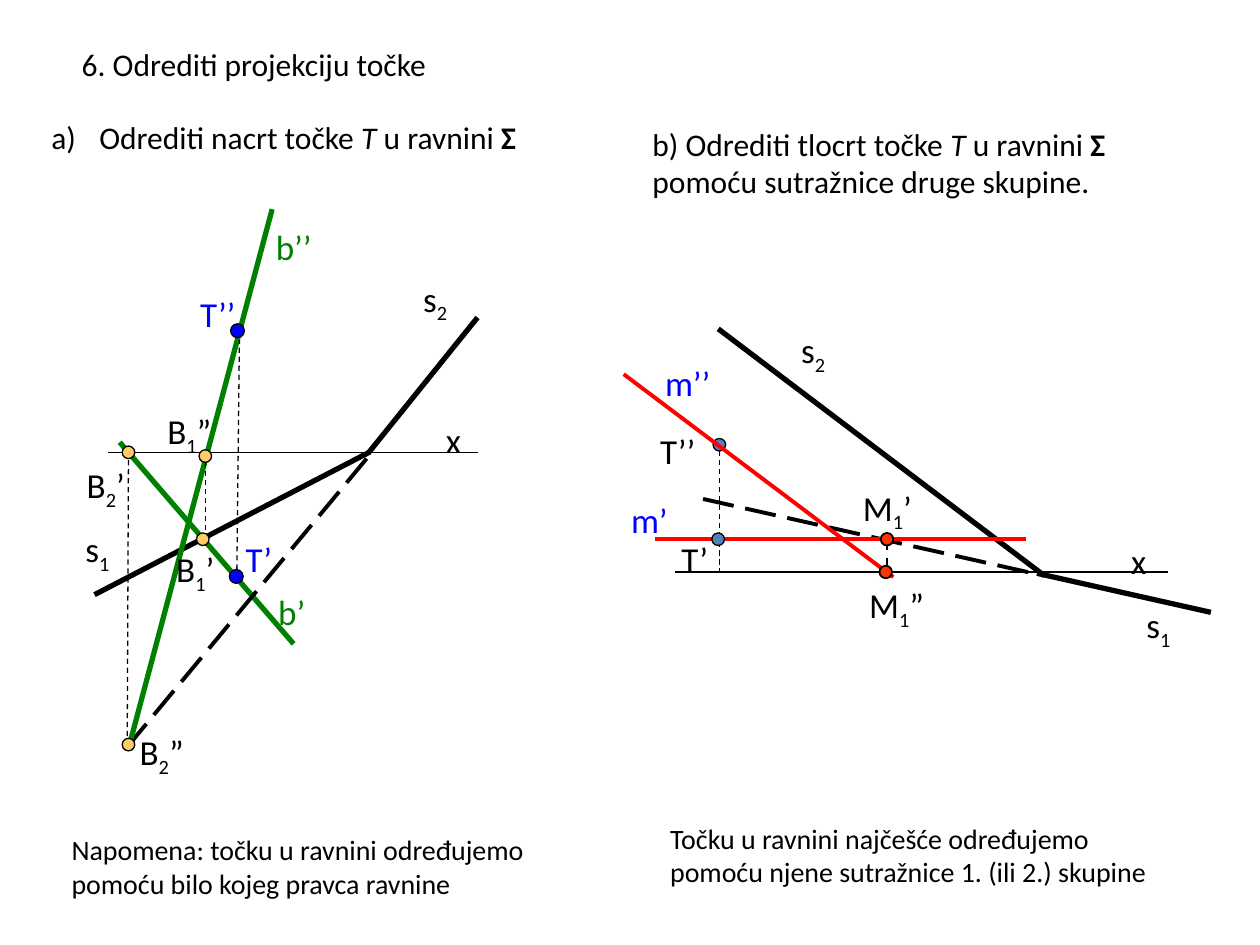
"""Build a descriptive-geometry slide on finding the projections of a point in a plane."""
from typing import NamedTuple, Optional

from lxml import etree
from pptx import Presentation
from pptx import util as u
from pptx.dml.color import RGBColor
from pptx.enum import dml, shapes, text
from pptx.oxml import ns

BLACK = RGBColor(0x00, 0x00, 0x00)
GREEN = RGBColor(0x00, 0x80, 0x00)
BLUE = RGBColor(0x00, 0x00, 0xFF)
RED = RGBColor(0xFF, 0x00, 0x00)
STEEL = RGBColor(0x4F, 0x81, 0xBD)
SAND = RGBColor(0xFF, 0xCC, 0x66)
ORANGE = RGBColor(0xFF, 0x33, 0x00)
DASH = dml.MSO_LINE.DASH
LONG_DASH = dml.MSO_LINE.LONG_DASH
FONT = "Calibri"
LABEL_HEIGHT = 0.44


class Run(NamedTuple):
    text: str
    bold: bool = False
    italic: bool = False
    sub: bool = False


class Line(NamedTuple):
    x1: float
    y1: float
    x2: float
    y2: float
    color: RGBColor = BLACK
    width: float = 0.75
    dash: Optional[dml.MSO_LINE] = None


class Dot(NamedTuple):
    left: float
    top: float
    fill: RGBColor
    size: float = 0.1
    border: float = 0.75


class Label(NamedTuple):
    left: float
    top: float
    width: float
    name: str
    index: str = ""
    mark: str = ""
    color: RGBColor = BLACK


DRAWING = [
    Line(0.95, 3.51, 2.33, 5.11, GREEN, 3),
    Line(5.36, 4.54, 9.27, 4.54),
    Line(5.7, 2.61, 8.29, 4.57, BLACK, 3),
    Line(8.23, 4.55, 9.61, 4.86, BLACK, 3),
    Line(5.58, 3.96, 8.2, 4.55, BLACK, 2.25, LONG_DASH),
    Dot(5.66, 3.48, STEEL),
    Line(0.86, 3.59, 3.79, 3.59),
    Line(3.79, 2.52, 2.92, 3.6, BLACK, 3),
    Line(2.93, 3.59, 0.75, 4.72, BLACK, 3),
    Line(1.02, 3.58, 1.01, 5.88, dash=DASH),
    Line(2.91, 3.64, 1, 5.94, BLACK, 2.25, LONG_DASH),
    Line(1.02, 5.94, 2.16, 1.66, GREEN, 3),
    Dot(1.82, 4.52, BLUE, 0.11),
    Line(1.88, 4.52, 1.9, 2.7, dash=DASH),
    Dot(1.83, 2.57, BLUE, 0.11),
    Line(4.95, 2.97, 7.09, 4.58, RED, 2.25),
    Line(5.2, 4.28, 8.14, 4.28, RED, 2.25),
    Line(5.71, 3.58, 5.71, 4.55, dash=DASH),
    Dot(5.65, 4.23, STEEL),
    Dot(0.97, 3.54, SAND),
    Line(1.63, 4.28, 1.63, 3.62, dash=DASH),
    Dot(1.58, 3.57, SAND),
    Dot(0.97, 5.86, SAND),
    Line(7.04, 4.28, 7.04, 4.54, BLACK, 1.5, DASH),
    Dot(6.99, 4.23, ORANGE, border=1),
    Dot(6.98, 4.49, ORANGE, border=1),
    Dot(1.56, 4.23, SAND),
]

LABELS = [
    Label(2.11, 4.64, 0.74, "b’", color=GREEN),
    Label(2.09, 1.74, 0.91, "b’’", color=GREEN),
    Label(0.58, 4.14, 0.65, "s", "1"),
    Label(3.26, 2.15, 0.51, "s", "2"),
    Label(3.44, 3.27, 0.39, "x"),
    Label(1.85, 4.22, 0.75, "T’", color=BLUE),
    Label(1.49, 2.27, 0.74, "T’’", color=BLUE),
    Label(1.3, 4.3, 0.7, "B", "1", "’"),
    Label(1.23, 3.2, 1.06, "B", "1", "”"),
    Label(0.59, 3.63, 0.57, "B", "2", "’"),
    Label(1.01, 5.75, 0.6, "B", "2", "”"),
    Label(9, 4.74, 0.41, "s", "1"),
    Label(6.26, 2.56, 0.41, "s", "2"),
    Label(8.88, 4.23, 0.4, "x"),
    Label(5.31, 4.22, 0.47, "T’"),
    Label(5.14, 3.36, 0.62, "T’’"),
    Label(4.91, 3.91, 0.62, "m’", color=BLUE),
    Label(5.18, 2.82, 0.64, "m’’", color=BLUE),
    Label(6.75, 3.81, 0.62, "M", "1", "’"),
    Label(6.8, 4.58, 0.67, "M", "1", "”"),
]


def add_line(s, line: Line) -> None:
    sp = s.shapes.add_connector(
        shapes.MSO_CONNECTOR.STRAIGHT,
        u.Inches(line.x1), u.Inches(line.y1), u.Inches(line.x2), u.Inches(line.y2))
    sp.line.color.rgb = line.color
    sp.line.width = u.Pt(line.width)
    if line.dash is not None:
        sp.line.dash_style = line.dash
    etree.SubElement(sp._element.spPr, ns.qn("a:effectLst"))


def add_dot(s, dot: Dot) -> None:
    sp = s.shapes.add_shape(
        shapes.MSO_SHAPE.OVAL, u.Inches(dot.left), u.Inches(dot.top),
        u.Inches(dot.size), u.Inches(dot.size))
    sp.shadow.inherit = False
    sp.fill.solid()
    sp.fill.fore_color.rgb = dot.fill
    sp.line.color.rgb = BLACK
    sp.line.width = u.Pt(dot.border)


def add_text(s, paragraphs: list[list[Run]], left: float, top: float, width: float,
             height: float, *, size: float = 18, color: RGBColor = BLACK,
             wrap: bool = True, numbered: bool = False) -> None:
    tf = s.shapes.add_textbox(
        u.Inches(left), u.Inches(top), u.Inches(width), u.Inches(height)).text_frame
    tf.word_wrap = wrap
    tf.auto_size = text.MSO_AUTO_SIZE.SHAPE_TO_FIT_TEXT
    for i, runs in enumerate(paragraphs):
        p = tf.add_paragraph() if i else tf.paragraphs[0]
        if numbered:
            ppr = p._p.get_or_add_pPr()
            ppr.set("marL", str(u.Inches(0.38)))
            ppr.set("indent", str(-u.Inches(0.38)))
            etree.SubElement(ppr, ns.qn("a:buAutoNum"), type="alphaLcParenR")
        for run in runs:
            r = p.add_run()
            r.text = run.text
            r.font.name = FONT
            r.font.size = u.Pt(size)
            r.font.color.rgb = color
            r.font.bold = run.bold
            r.font.italic = run.italic
            if run.sub:
                r._r.get_or_add_rPr().set("baseline", "-25000")


def add_label(s, label: Label) -> None:
    runs = [Run(label.name), Run(label.index, sub=True), Run(label.mark)]
    add_text(s, [[run for run in runs if run.text]], label.left, label.top,
             label.width, LABEL_HEIGHT, size=20, color=label.color)


def main() -> None:
    prs = Presentation()
    prs.slide_width, prs.slide_height = u.Inches(10), u.Inches(7.5)
    s = prs.slides.add_slide(prs.slide_layouts[6])
    for item in DRAWING:
        if isinstance(item, Line):
            add_line(s, item)
        else:
            add_dot(s, item)
    for label in LABELS:
        add_label(s, label)

    point_in_plane = [Run("T", italic=True), Run(" u ravnini "), Run("Σ", bold=True)]
    add_text(s, [[Run("6. Odrediti projekciju točke")]], 0.55, 0.31, 4.12, 0.4)
    add_text(s, [[Run("Odrediti nacrt točke "), *point_in_plane]],
             0.31, 0.89, 4.07, 0.4, numbered=True)
    add_text(s, [[Run("b) Odrediti tlocrt točke "), *point_in_plane,
                  Run(" pomoću sutražnice druge skupine.")]], 5.08, 0.94, 3.85, 0.71)
    add_text(s, [[Run("Napomena: točku u ravnini određujemo")],
                 [Run("pomoću bilo kojeg pravca ravnine")]],
             0.47, 6.56, 3.84, 0.64, size=16, wrap=False)
    add_text(s, [[Run("Točku u ravnini najčešće određujemo")],
                 [Run("pomoću njene sutražnice 1. (ili 2.) skupine")]],
             5.22, 6.47, 4.02, 0.64, size=16, wrap=False)
    prs.save("out.pptx")


if __name__ == "__main__":
    main()
